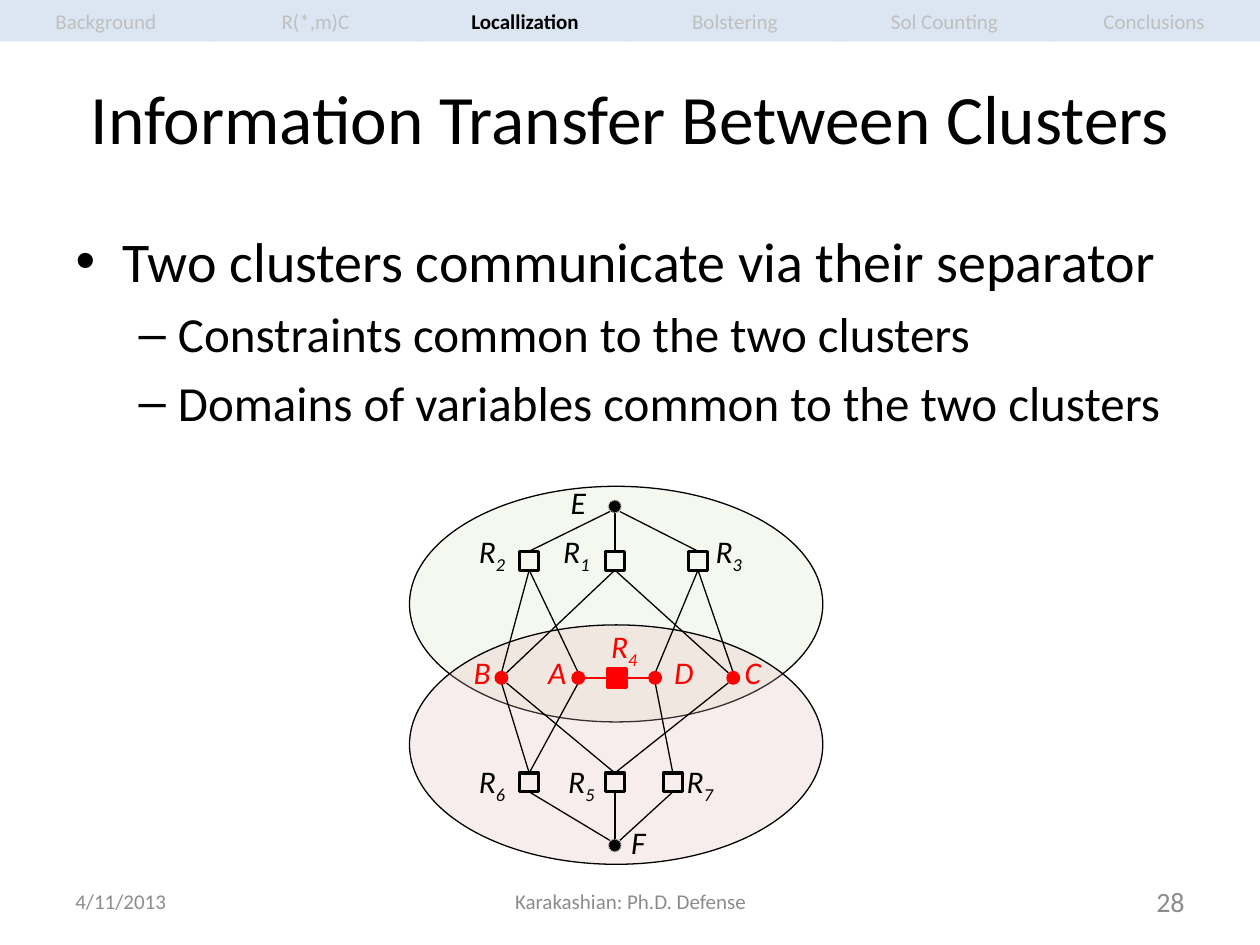
from lxml.etree import SubElement
from pptx import Presentation
from pptx.dml.color import RGBColor
from pptx.enum.dml import MSO_LINE
from pptx.enum.shapes import MSO_CONNECTOR, MSO_SHAPE
from pptx.enum.text import MSO_ANCHOR, MSO_AUTO_SIZE, PP_ALIGN
from pptx.oxml.ns import qn
from pptx.util import Inches, Pt

BLACK = RGBColor(0x00, 0x00, 0x00)
RED = RGBColor(0xFF, 0x00, 0x00)
GREEN = RGBColor(0xD7, 0xE4, 0xBD)
PINK = RGBColor(0xE6, 0xB9, 0xB8)
TAB_BLUE = RGBColor(0xDC, 0xE6, 0xF2)
TAB_GRAY = RGBColor(0xBF, 0xBF, 0xBF)
FOOTER_GRAY = RGBColor(0x8C, 0x8C, 0x8C)
DOT_GRAY = RGBColor(0xA6, 0xA6, 0xA6)

SECTIONS = ["Background", "R(*,m)C", "Locallization", "Bolstering", "Sol Counting", "Conclusions"]
CURRENT_SECTION = "Locallization"
BULLETS = [
    ("Two clusters communicate via their separator", 0, 32),
    ("Constraints common to the two clusters", 1, 28),
    ("Domains of variables common to the two clusters", 1, 28),
]
FOOTERS = [
    ("4/11/2013", 0.5, 2.33, PP_ALIGN.LEFT, 12),
    ("Karakashian: Ph.D. Defense", 3.42, 3.17, PP_ALIGN.CENTER, 12),
    ("28", 7.17, 2.33, PP_ALIGN.RIGHT, 16),
]
CLUSTERS = [(3.86, 1.87, GREEN), (4.96, 1.9, PINK)]
# name: centre x, centre y, label left, label top
VARIABLES = {
    "E": (4.88, 4.02, 4.53, 3.83),
    "B": (3.98, 5.38, 3.76, 5.18),
    "A": (4.59, 5.38, 4.35, 5.18),
    "D": (5.2, 5.38, 5.35, 5.18),
    "C": (5.82, 5.38, 5.91, 5.18),
    "F": (4.88, 6.71, 5.01, 6.53),
}
RELATIONS = {
    "R1": (4.88, 4.45, 4.47, 4.22),
    "R2": (4.2, 4.45, 3.8, 4.22),
    "R3": (5.54, 4.45, 5.68, 4.22),
    "R4": (4.9, 5.38, 4.85, 4.98),
    "R5": (4.88, 6.21, 4.51, 6.05),
    "R6": (4.2, 6.21, 3.8, 6.05),
    "R7": (5.34, 6.21, 5.45, 6.05),
}
SCOPES = {"R1": "EBC", "R2": "EAB", "R3": "EDC", "R4": "AD", "R5": "BCF", "R6": "ABF", "R7": "DF"}
SEPARATOR = {"A", "B", "C", "D", "R4"}
DOT, SQUARE = 0.1, 0.15


def write(paragraph, text, size, color=BLACK, bold=None, italic=None, align=None, subscript=False):
    """Append a formatted run to a paragraph."""
    run = paragraph.add_run()
    run.text = text
    font = run.font
    font.name, font.size, font.bold, font.italic = "Calibri", Pt(size), bold, italic
    font.color.rgb = color
    if subscript:
        run._r.get_or_add_rPr().set("baseline", "-25000")
    if align is not None:
        paragraph.alignment = align


def place(shape, left, top, width, height):
    """Set the position and size of a shape in inches."""
    shape.left, shape.top = Inches(left), Inches(top)
    shape.width, shape.height = Inches(width), Inches(height)


def clear_insets(frame):
    """Remove the inner margins of a text frame."""
    frame.margin_left = frame.margin_right = frame.margin_top = frame.margin_bottom = 0


def add_figure(slide, kind, left, top, width, height, fill=None, line=None, weight=0.75, alpha=None):
    """Add a flat preset shape."""
    shape = slide.shapes.add_shape(kind, Inches(left), Inches(top), Inches(width), Inches(height))
    shape.shadow.inherit = False
    if fill is None:
        shape.fill.background()
    else:
        shape.fill.solid()
        shape.fill.fore_color.rgb = fill
    if alpha is not None:
        fill_color = shape._element.spPr.find(qn("a:solidFill"))[0]
        SubElement(fill_color, qn("a:alpha")).set("val", str(alpha * 1000))
    if line is None:
        shape.line.fill.background()
    else:
        shape.line.color.rgb = line
        shape.line.width = Pt(weight)
    return shape


def add_edge(slide, start, end, color):
    """Add a thin straight line between two points."""
    edge = slide.shapes.add_connector(MSO_CONNECTOR.STRAIGHT, *map(Inches, start + end))
    edge.line.color.rgb = color
    edge.line.width = Pt(0.75)
    SubElement(edge._element.spPr, qn("a:effectLst"))


def add_label(slide, name, left, top, color):
    """Add an italic node name whose digit is a subscript."""
    box = slide.shapes.add_textbox(Inches(left), Inches(top), Inches(0.17 if len(name) == 1 else 0.27), Inches(0.3))
    frame = box.text_frame
    clear_insets(frame)
    frame.word_wrap = False
    frame.auto_size = MSO_AUTO_SIZE.SHAPE_TO_FIT_TEXT
    write(frame.paragraphs[0], name[0], 18, color, italic=True)
    if name[1:]:
        write(frame.paragraphs[0], name[1:], 18, color, italic=True, subscript=True)


def add_scope_edge(slide, relation, variable):
    """Join the facing sides of a relation and a variable."""
    rx, ry = RELATIONS[relation][:2]
    vx, vy = VARIABLES[variable][:2]
    across = 1 if vx > rx else -1
    if ry == vy:
        add_edge(slide, (rx + across * SQUARE / 2, ry), (vx - across * DOT / 2, vy), RED)
        return
    down = 1 if vy > ry else -1
    rim = 0.04
    shift = across * rim if abs(vx - rx) > 0.4 else 0
    add_edge(slide, (rx, ry + down * SQUARE / 2), (vx - shift, vy - down * rim), BLACK)


def add_node(slide, name, kind, size, node, **style):
    """Add a node centred on its point, with its label."""
    x, y, label_left, label_top = node
    color = RED if name in SEPARATOR else BLACK
    shape = add_figure(slide, kind, x - size / 2, y - size / 2, size, size, **style)
    add_label(slide, name, label_left, label_top, color)
    return shape


def add_network(slide):
    """Draw the two overlapping clusters with their relations and variables."""
    for top, height, color in CLUSTERS:
        add_figure(slide, MSO_SHAPE.OVAL, 3.25, top, 3.28, height, color, BLACK, alpha=25)
    for relation, scope in SCOPES.items():
        for variable in scope:
            add_scope_edge(slide, relation, variable)
    for name, node in RELATIONS.items():
        shared = name in SEPARATOR
        add_node(slide, name, MSO_SHAPE.RECTANGLE, SQUARE, node,
                 fill=RED if shared else None, line=RED if shared else BLACK, weight=1.75)
    for name, node in VARIABLES.items():
        shared = name in SEPARATOR
        dot = add_node(slide, name, MSO_SHAPE.OVAL, DOT, node,
                       fill=RED if shared else BLACK, line=RED if shared else DOT_GRAY)
        if not shared:
            dot.line.dash_style = MSO_LINE.ROUND_DOT


def add_tabs(slide):
    """Draw the row of section tabs with the current one highlighted."""
    for index, section in enumerate(SECTIONS):
        tab = add_figure(slide, MSO_SHAPE.RECTANGLE, index * 8.32 / 5, 0, 1.68, 0.33, TAB_BLUE)
        frame = tab.text_frame
        clear_insets(frame)
        frame.vertical_anchor = MSO_ANCHOR.MIDDLE
        current = section == CURRENT_SECTION
        write(frame.paragraphs[0], section, 12, BLACK if current else TAB_GRAY,
              bold=current, align=PP_ALIGN.CENTER)


def add_footers(slide):
    """Add the date, the talk name and the slide number."""
    for text, left, width, align, size in FOOTERS:
        frame = slide.shapes.add_textbox(Inches(left), Inches(6.95), Inches(width), Inches(0.4)).text_frame
        frame.word_wrap = True
        frame.vertical_anchor = MSO_ANCHOR.MIDDLE
        write(frame.paragraphs[0], text, size, FOOTER_GRAY, align=align)


def fill_placeholders(slide):
    """Write the title and the bullet list."""
    title, body = slide.shapes.title, slide.placeholders[1]
    place(title, 0.5, 0.3, 9, 1.25)
    title.text_frame.vertical_anchor = MSO_ANCHOR.MIDDLE
    write(title.text_frame.paragraphs[0], "Information Transfer Between Clusters", 39.6, align=PP_ALIGN.CENTER)
    place(body, 0.5, 1.75, 9, 4.95)
    for index, (text, level, size) in enumerate(BULLETS):
        paragraph = body.text_frame.add_paragraph() if index else body.text_frame.paragraphs[0]
        paragraph.level = level
        write(paragraph, text, size)


def main():
    """Build and save the slide."""
    deck = Presentation()
    deck.slide_width, deck.slide_height = Inches(10), Inches(7.5)
    slide = deck.slides.add_slide(deck.slide_layouts[1])
    fill_placeholders(slide)
    add_footers(slide)
    add_network(slide)
    add_tabs(slide)
    deck.save("out.pptx")


if __name__ == "__main__":
    main()
